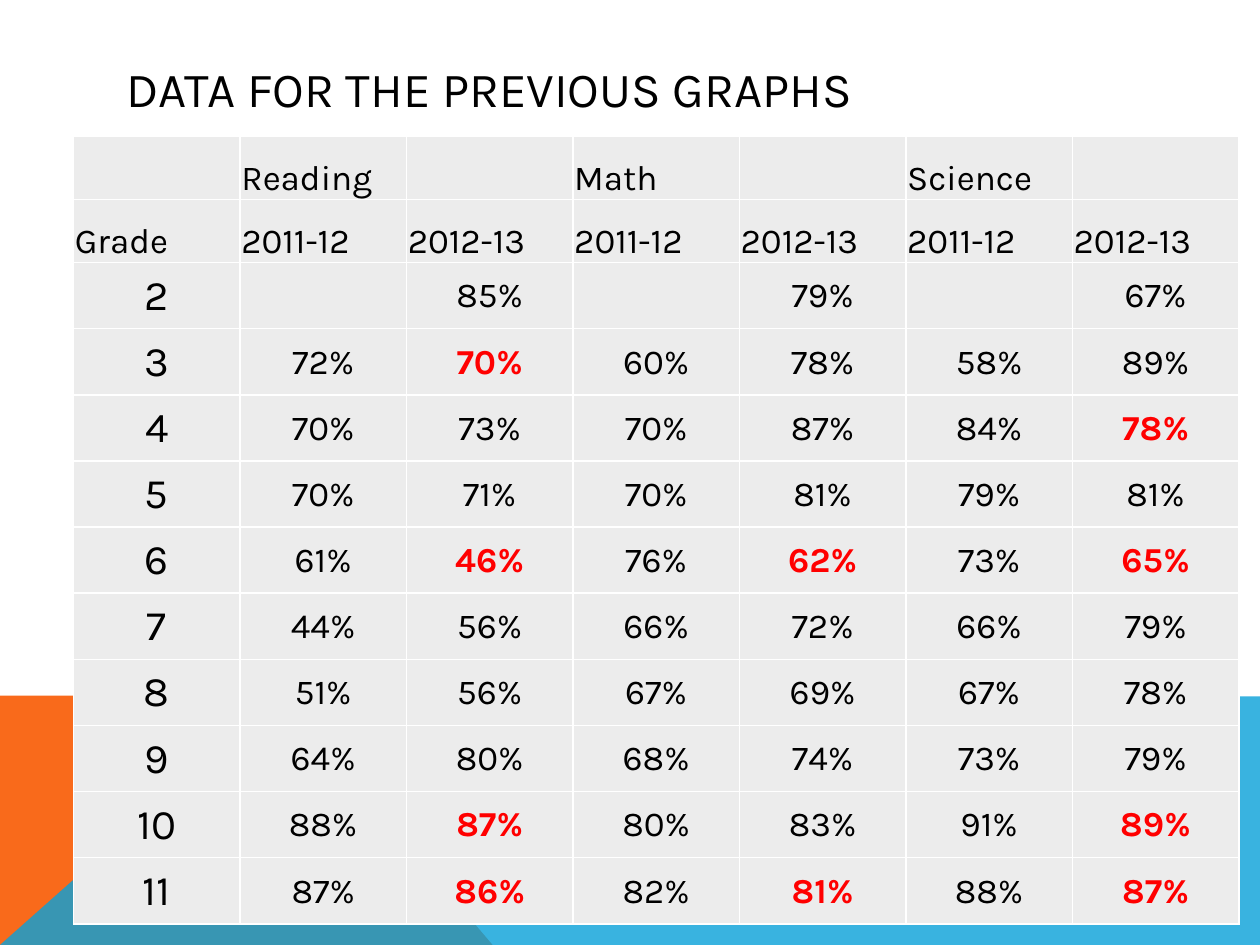
"""Build a slide with a table of grade scores by subject and year."""
from pptx import Presentation
from pptx.dml.color import RGBColor
from pptx.enum.text import MSO_ANCHOR as Anchor, PP_ALIGN as Align
from pptx.oxml import parse_xml
from pptx.oxml.ns import nsdecls, qn
from pptx.util import Pt

TITLE = "DATA FOR THE PREVIOUS GRAPHS"
SUBJECTS = ["Reading", "Math", "Science"]
YEARS = ["2011-12", "2012-13"]
SCORES = {
    2: [(None, 85), (None, 79), (None, 67)],
    3: [(72, 70), (60, 78), (58, 89)],
    4: [(70, 73), (70, 87), (84, 78)],
    5: [(70, 71), (70, 81), (79, 81)],
    6: [(61, 46), (76, 62), (73, 65)],
    7: [(44, 56), (66, 72), (66, 79)],
    8: [(51, 56), (67, 69), (67, 78)],
    9: [(64, 80), (68, 74), (73, 79)],
    10: [(88, 87), (80, 83), (91, 89)],
    11: [(87, 86), (82, 81), (88, 87)],
}
COLORS = {"text": "000000", "drop": "FF0000", "cell": "ECECEC", "border": "FFFFFF",
          "orange": "F96A1B", "blue": "08A1D9"}
BANDS = [
    ("orange", 100, [(0, 540), (0, 397.5), (160.5, 397.5), (281.5, 540)]),
    ("blue", 80, [(0, 540), (160.5, 397.5), (720, 398), (720, 540)]),
]
FONT = "Karla"
HEADER_ROWS, HEADER_HEIGHT, ROW_HEIGHT = 2, 36, 37.8
TABLE_LEFT, TABLE_TOP, TABLE_WIDTH = 42, 78, 666


def write(frame, text, size=20, color="text", bold=False, align=Align.LEFT):
    """Put one formatted paragraph in a text frame."""
    para = frame.paragraphs[0]
    para.alignment = align
    span = para.add_run()
    span.text = text
    span.font.name, span.font.size, span.font.bold = FONT, Pt(size), bold
    span.font.color.rgb = RGBColor.from_string(COLORS[color])


def add_band(page, color, opacity, points):
    """Draw one filled outline across the foot of the page."""
    corners = [(Pt(x), Pt(y)) for x, y in points]
    builder = page.shapes.build_freeform(*corners[0])
    builder.add_line_segments(corners[1:], close=True)
    band = builder.convert_to_shape()
    band.shadow.inherit = False
    band.line.fill.background()
    band.fill.solid()
    band.fill.fore_color.rgb = RGBColor.from_string(COLORS[color])
    if opacity < 100:
        tint = band.fill._xPr.find(qn("a:solidFill"))[0]
        tint.append(parse_xml(f'<a:alpha {nsdecls("a")} val="{opacity * 1000}"/>'))


def style_cell(cell, anchor):
    """Set margins, borders and fill of a table cell."""
    cell.margin_left = cell.margin_right = cell.margin_top = Pt(0.75)
    cell.margin_bottom = 0
    cell.vertical_anchor = anchor
    properties = cell._tc.get_or_add_tcPr()
    for side in ("lnL", "lnR", "lnT", "lnB"):
        properties.append(parse_xml(
            f'<a:{side} {nsdecls("a")} w="{Pt(1)}"><a:solidFill>'
            f'<a:srgbClr val="{COLORS["border"]}"/></a:solidFill></a:{side}>'))
    cell.fill.solid()
    cell.fill.fore_color.rgb = RGBColor.from_string(COLORS["cell"])


def table_rows():
    """Return rows of (text, format) pairs, with falling scores marked."""
    subjects = [""] + [text for subject in SUBJECTS for text in (subject, "")]
    years = ["Grade"] + YEARS * len(SUBJECTS)
    rows = [[(text, {}) for text in header] for header in (subjects, years)]
    for grade, pairs in SCORES.items():
        row = [(str(grade), {"size": 24, "align": Align.CENTER})]
        for before, after in pairs:
            fell = before is not None and after < before
            mark = {"color": "drop", "bold": True} if fell else {}
            row.append(("" if before is None else f"{before}%", {"align": Align.CENTER}))
            row.append((f"{after}%", {"align": Align.CENTER, **mark}))
        rows.append(row)
    return rows


deck = Presentation()
deck.slide_width, deck.slide_height = Pt(720), Pt(540)
page = deck.slides.add_slide(deck.slide_layouts[5])

title = page.shapes.title
title.left, title.top, title.width, title.height = Pt(65), Pt(29), Pt(592), Pt(43)
title.text_frame.vertical_anchor = Anchor.MIDDLE
write(title.text_frame, TITLE, size=28)

for band in BANDS:
    add_band(page, *band)

rows = table_rows()
heights = [HEADER_HEIGHT if index < HEADER_ROWS else ROW_HEIGHT for index in range(len(rows))]
table = page.shapes.add_table(len(rows), len(rows[0]), Pt(TABLE_LEFT), Pt(TABLE_TOP),
                              Pt(TABLE_WIDTH), Pt(sum(heights))).table
table.first_row = table.horz_banding = False
for column in table.columns:
    column.width = Pt(TABLE_WIDTH / len(rows[0]))
for row_index, row in enumerate(rows):
    table.rows[row_index].height = Pt(heights[row_index])
    anchor = Anchor.BOTTOM if row_index < HEADER_ROWS else Anchor.MIDDLE
    for column_index, (text, style) in enumerate(row):
        cell = table.cell(row_index, column_index)
        style_cell(cell, anchor)
        if text:
            write(cell.text_frame, text, **style)

deck.save("out.pptx")
